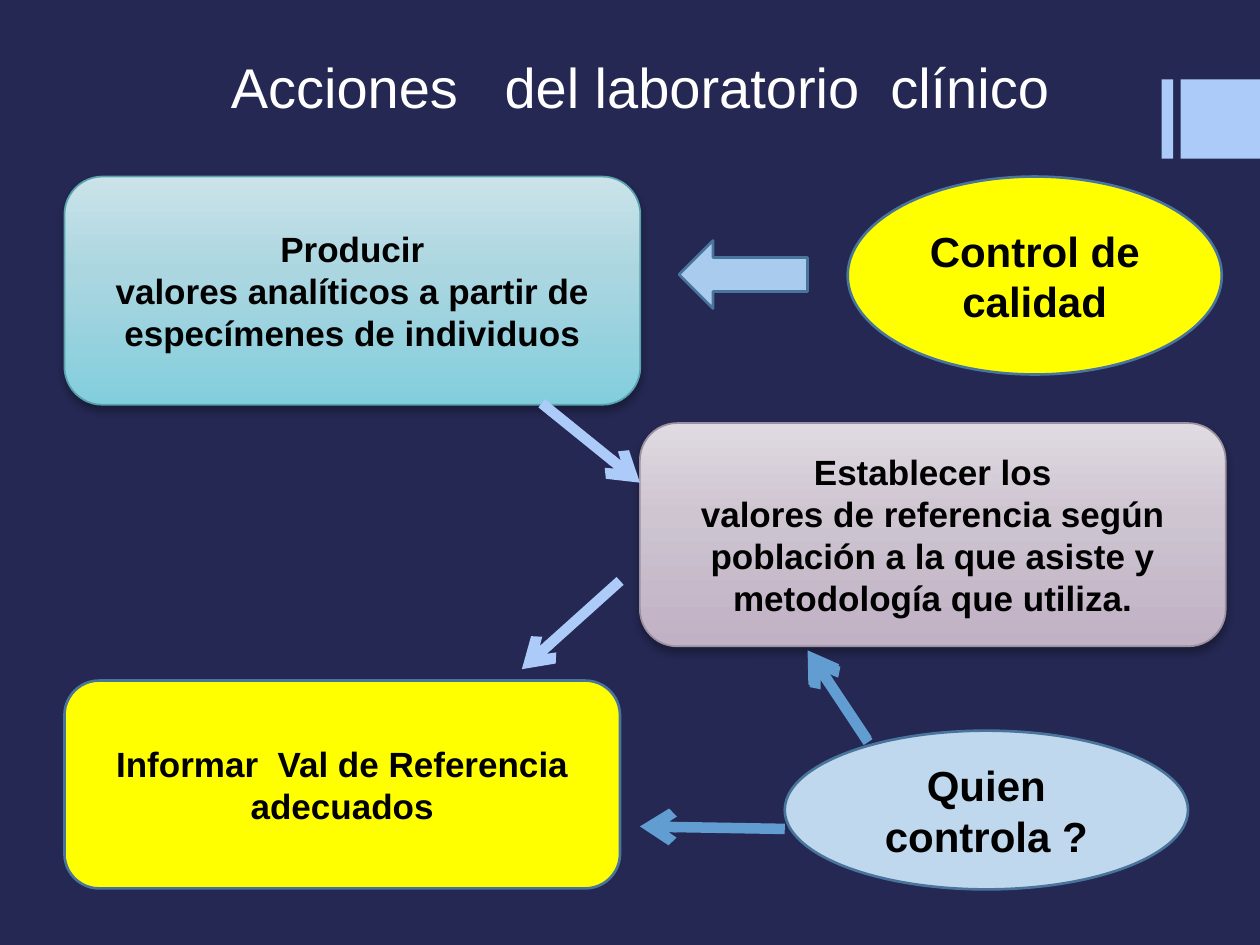
"""Build the slide on the actions of a clinical laboratory."""
from dataclasses import dataclass

from lxml import etree
from pptx import Presentation
from pptx.dml.color import RGBColor
from pptx.enum.shapes import MSO_CONNECTOR, MSO_SHAPE
from pptx.enum.text import MSO_ANCHOR, PP_ALIGN
from pptx.oxml.ns import qn
from pptx.util import Cm, Pt

RECT = MSO_SHAPE.RECTANGLE
ROUNDED = MSO_SHAPE.ROUNDED_RECTANGLE
OVAL = MSO_SHAPE.OVAL
LEFT_ARROW = MSO_SHAPE.LEFT_ARROW
STRAIGHT = MSO_CONNECTOR.STRAIGHT
CENTER = PP_ALIGN.CENTER
MIDDLE = MSO_ANCHOR.MIDDLE


@dataclass(frozen=True)
class Theme:
    font: str = "Arial"
    title_size: int = 32
    box_size: int = 20
    oval_size: int = 24
    outline: float = 1.5
    soft_outline: float = 1
    arrow_width: float = 6
    stops: tuple = (0, 41, 100)
    background: str = "242852"
    light: str = "FFFFFF"
    dark: str = "000000"
    accent: str = "ACCBF9"
    blue: str = "629DD1"
    edge: str = "49749B"
    yellow: str = "FFFF00"
    pale_blue: str = "C0D8ED"
    arrow_fill: str = "A9CCEE"
    teal: tuple = ("CBE3E9", "ABD6E0", "83CEDD")
    teal_edge: str = "5AA2AE"
    mauve: tuple = ("E0DBE2", "CEC5D1", "C0B1C4")
    mauve_edge: str = "9D90A0"


class Deck:
    """Hold the theme and the current slide."""

    def __init__(self, prs, theme):
        self.theme = theme
        self.s = prs.slides.add_slide(prs.slide_layouts[5])
        fill = self.s.background.fill
        fill.solid()
        fill.fore_color.rgb = RGBColor.from_string(theme.background)

    def add_text(self, sp, lines, size, color, bold=False):
        tf = sp.text_frame
        tf.word_wrap = True
        tf.vertical_anchor = MIDDLE
        for i, line in enumerate(lines):
            p = tf.add_paragraph() if i else tf.paragraphs[0]
            p.alignment = CENTER
            r = p.add_run()
            r.text = line
            r.font.name = self.theme.font
            r.font.size = Pt(size)
            r.font.bold = bold
            r.font.color.rgb = RGBColor.from_string(color)

    def title(self, text, at):
        sp = self.s.shapes.title
        sp.left, sp.top, sp.width, sp.height = map(Cm, at)
        self.add_text(sp, [text], self.theme.title_size, self.theme.light)

    def shape(self, kind, at, fill, edge=None):
        sp = self.s.shapes.add_shape(kind, *map(Cm, at))
        sp.shadow.inherit = False
        sp.fill.solid()
        sp.fill.fore_color.rgb = RGBColor.from_string(fill)
        if edge:
            sp.line.color.rgb = RGBColor.from_string(edge)
            sp.line.width = Pt(self.theme.outline)
        else:
            sp.line.fill.background()
        return sp

    def label(self, kind, at, fill, lines, size):
        sp = self.shape(kind, at, fill, self.theme.edge)
        self.add_text(sp, lines, size, self.theme.dark, bold=True)
        return sp

    def raised_box(self, at, colors, edge, lines):
        sp = self.label(ROUNDED, at, colors[0], lines, self.theme.box_size)
        sp.line.color.rgb = RGBColor.from_string(edge)
        sp.line.width = Pt(self.theme.soft_outline)
        sp.fill.gradient()
        sp.fill.gradient_angle = 270
        spPr = sp._element.spPr
        gs_list = spPr.find(".//" + qn("a:gsLst"))
        for gs in list(gs_list):
            gs_list.remove(gs)
        for pos, color in zip(self.theme.stops, colors):
            gs = etree.SubElement(gs_list, qn("a:gs"), pos=str(pos * 1000))
            etree.SubElement(gs, qn("a:srgbClr"), val=color)
        shadow = etree.SubElement(
            spPr.find(qn("a:effectLst")), qn("a:outerShdw"), blurRad=str(Pt(4)),
            dist=str(Pt(3)), dir="5400000", rotWithShape="0")
        color = etree.SubElement(shadow, qn("a:srgbClr"), val=self.theme.dark)
        etree.SubElement(color, qn("a:alpha"), val="28000")

    def arrow(self, start, end, color):
        line = self.s.shapes.add_connector(STRAIGHT, *map(Cm, start + end))
        line.line.color.rgb = RGBColor.from_string(color)
        line.line.width = Pt(self.theme.arrow_width)
        etree.SubElement(line.get_or_add_ln(), qn("a:tailEnd"), type="arrow")
        etree.SubElement(line._element.spPr, qn("a:effectLst"))


def main():
    prs = Presentation()
    prs.slide_width, prs.slide_height = Cm(25.4), Cm(19.05)
    theme = Theme()
    deck = Deck(prs, theme)

    for left, width in ((23.42, 0.23), (23.8, 1.6)):
        deck.shape(RECT, (left, 1.6, width, 1.6), theme.accent)
    deck.title("Acciones   del laboratorio  clínico", (1.93, 0.74, 21.97, 2.01))

    deck.raised_box((1.3, 3.56, 11.61, 4.6), theme.teal, theme.teal_edge, [
        "Producir",
        "valores analíticos a partir de especímenes de individuos"])
    deck.raised_box((12.9, 8.53, 11.81, 4.5), theme.mauve, theme.mauve_edge, [
        "Establecer los",
        "valores de referencia según",
        "población a la que asiste y metodología que utiliza."])
    deck.label(ROUNDED, (1.3, 13.72, 11.2, 4.19), theme.yellow,
               ["Informar  Val de Referencia adecuados"], theme.box_size)
    deck.label(OVAL, (17.09, 3.56, 7.54, 3.99), theme.yellow,
               ["Control de calidad"], theme.oval_size)
    deck.shape(LEFT_ARROW, (13.69, 4.85, 2.59, 1.37), theme.arrow_fill, theme.edge)
    deck.label(OVAL, (15.82, 14.73, 8.13, 3.2), theme.pale_blue,
               ["Quien controla ?"], theme.oval_size)

    for start, end, color in (
        ((17.5, 14.96), (16.31, 13.16), theme.blue),
        ((15.82, 16.71), (12.9, 16.66), theme.blue),
        ((17.48, 14.91), (16.28, 13.11), theme.blue),
        ((10.92, 8.13), (12.9, 9.73), theme.accent),
        ((12.5, 11.71), (10.52, 13.49), theme.accent),
    ):
        deck.arrow(start, end, color)

    prs.save("out.pptx")


if __name__ == "__main__":
    main()
